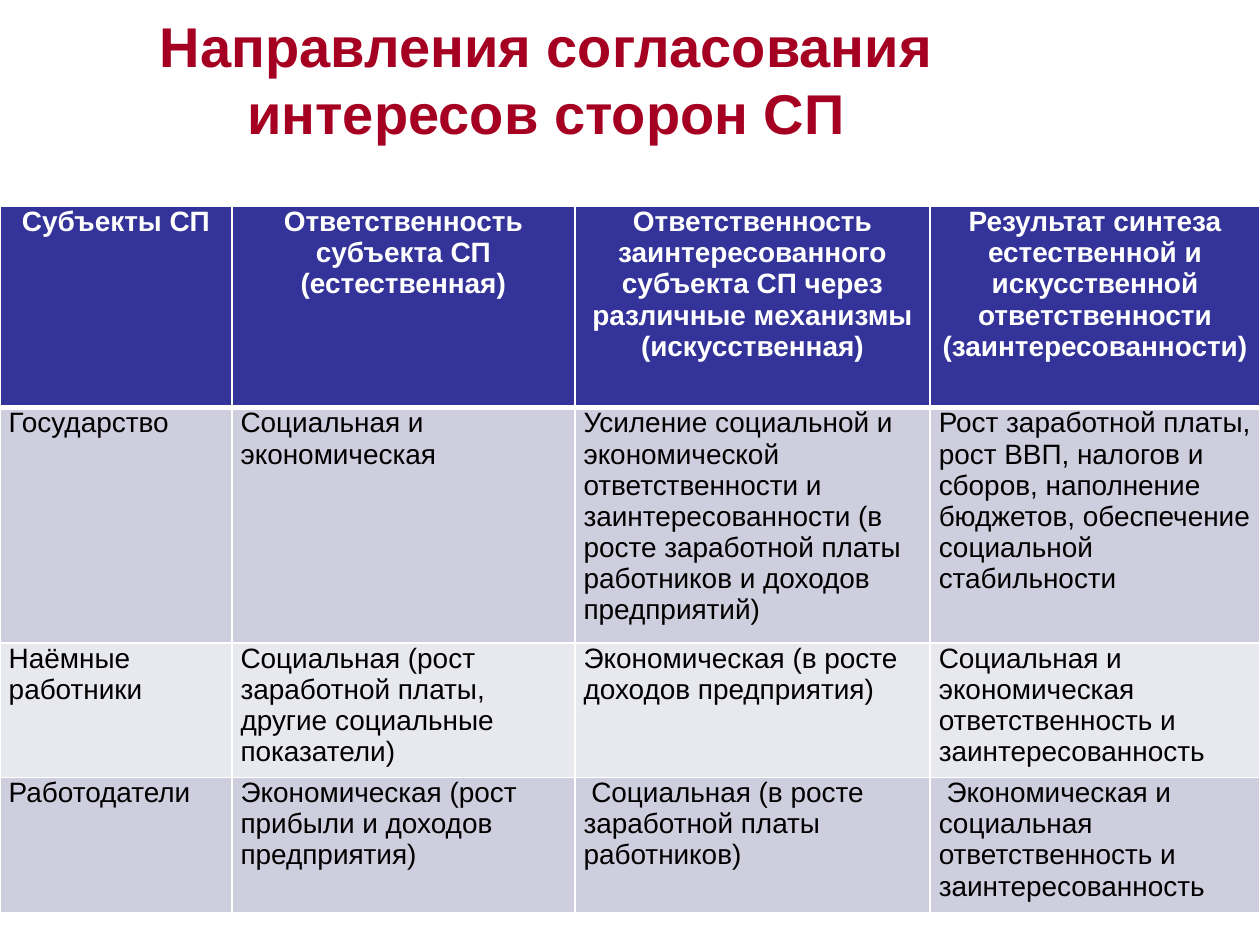
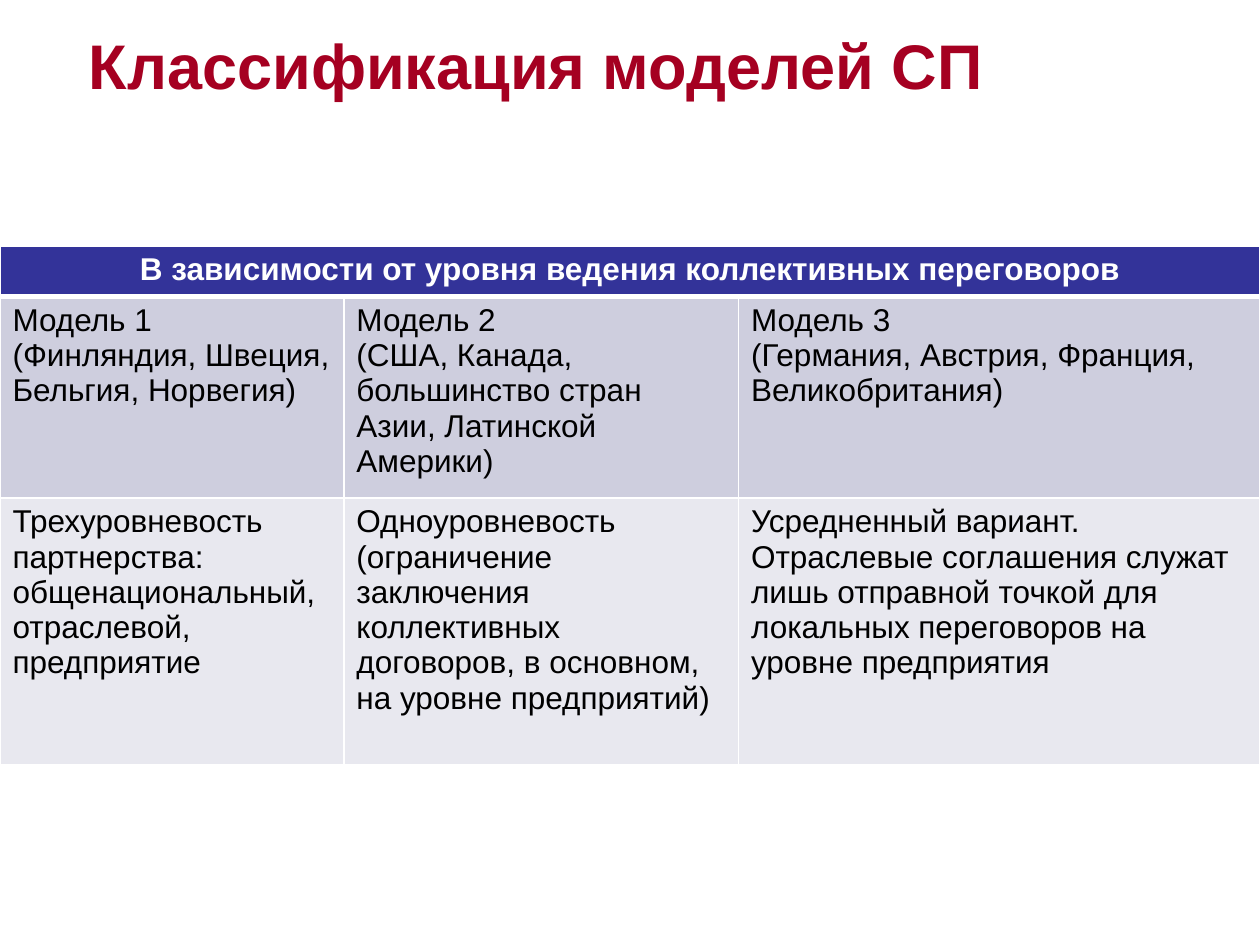
import pptx
import pptx.dml.color
import pptx.enum.text
import pptx.oxml
import pptx.oxml.ns
import pptx.util

Pt = pptx.util.Pt
RGBColor = pptx.dml.color.RGBColor
PP_ALIGN = pptx.enum.text.PP_ALIGN
MSO_ANCHOR = pptx.enum.text.MSO_ANCHOR

# Shared look
FONT = "Arial"
TITLE_RED = RGBColor(0xA5, 0x00, 0x21)
HEADER_BLUE = RGBColor(0x33, 0x33, 0x99)
BAND_DARK = RGBColor(0xCE, 0xCE, 0xDE)
BAND_LIGHT = RGBColor(0xE8, 0xE8, 0xEF)
WHITE = RGBColor(0xFF, 0xFF, 0xFF)
BLACK = RGBColor(0x00, 0x00, 0x00)
SLIDE_WIDTH, SLIDE_HEIGHT = Pt(720), Pt(540)
TITLE_WIDTH = 556.5
GRID_LINE, HEADER_LINE = Pt(1), Pt(3)


def write_paragraph(paragraph, text, size, color, bold, centred):
    paragraph.alignment = PP_ALIGN.CENTER if centred else PP_ALIGN.LEFT
    run = paragraph.add_run()
    run.text = text
    run.font.name = FONT
    run.font.size = Pt(size)
    run.font.bold = bold
    run.font.color.rgb = color


def set_borders(cell, row_index):
    widths = {
        "L": GRID_LINE,
        "R": GRID_LINE,
        "T": HEADER_LINE if row_index == 1 else GRID_LINE,
        "B": HEADER_LINE if row_index == 0 else GRID_LINE,
    }
    properties = cell._tc.get_or_add_tcPr()
    for side, width in widths.items():
        properties.append(pptx.oxml.parse_xml(
            f'<a:ln{side} {pptx.oxml.ns.nsdecls("a")} w="{int(width)}">'
            f'<a:solidFill><a:srgbClr val="{WHITE}"/></a:solidFill>'
            f'</a:ln{side}>'))


# Slide content: title boxes are left, top, height; cells are lists of paragraphs
slides = [
    {
        "title": "Направления согласования интересов сторон СП",
        "title_size": 32,
        "title_box": (34, 0, 90),
        "table_top": 118,
        "text_size": 16,
        "margins": (5, 0),
        "columns": [132.5, 196, 203, 188.5],
        "row_heights": [115, 134, 77, 77],
        "rows": [
            [["Субъекты СП"],
             ["Ответственность субъекта СП (естественная)"],
             ["Ответственность заинтересованного субъекта СП через "
              "различные механизмы (искусственная)"],
             ["Результат синтеза естественной и искусственной "
              "ответственности (заинтересованности)"]],
            [["Государство"],
             ["Социальная и экономическая"],
             ["Усиление социальной и экономической ответственности и "
              "заинтересованности (в росте заработной платы работников "
              "и доходов предприятий)"],
             ["Рост заработной платы, рост ВВП, налогов и сборов, "
              "наполнение бюджетов, обеспечение социальной стабильности"]],
            [["Наёмные работники"],
             ["Социальная (рост заработной платы, другие социальные "
              "показатели)"],
             ["Экономическая (в росте доходов предприятия)"],
             ["Социальная и экономическая ответственность и "
              "заинтересованность"]],
            [["Работодатели"],
             ["Экономическая (рост прибыли и доходов предприятия)"],
             [" Социальная (в росте заработной платы работников)"],
             [" Экономическая и социальная ответственность и "
              "заинтересованность"]],
        ],
    },
    {
        "title": "Классификация моделей СП",
        "title_size": 36,
        "title_box": (28, 16.5, 40.5),
        "table_top": 140.5,
        "text_size": 18,
        "margins": (7.2, 3.6),
        "columns": [196.5, 225.5, 298],
        "row_heights": [27, 108, 152.5],
        "rows": [
            [["В зависимости от уровня ведения коллективных переговоров"]],
            [["Модель 1", "(Финляндия, Швеция, Бельгия, Норвегия)"],
             ["Модель 2",
              "(США, Канада, большинство стран Азии, Латинской Америки)"],
             ["Модель 3", "(Германия, Австрия, Франция, Великобритания)"]],
            [["Трехуровневость партнерства: общенациональный, "
              "отраслевой, предприятие"],
             ["Одноуровневость (ограничение заключения коллективных "
              "договоров, в основном, на уровне предприятий)"],
             ["Усредненный вариант. Отраслевые соглашения служат лишь "
              "отправной точкой для локальных переговоров на уровне "
              "предприятия"]],
        ],
    },
]

presentation = pptx.Presentation()
presentation.slide_width = SLIDE_WIDTH
presentation.slide_height = SLIDE_HEIGHT
blank_layout = presentation.slide_layouts[6]

for content in slides:
    slide = presentation.slides.add_slide(blank_layout)

    # Title
    left, top, height = content["title_box"]
    title = slide.shapes.add_textbox(Pt(left), Pt(top), Pt(TITLE_WIDTH), Pt(height))
    title.text_frame.word_wrap = True
    title.text_frame.vertical_anchor = MSO_ANCHOR.MIDDLE
    write_paragraph(title.text_frame.paragraphs[0], content["title"],
                    content["title_size"], TITLE_RED, True, True)

    # Table grid
    rows, columns = content["rows"], content["columns"]
    row_heights = content["row_heights"]
    table = slide.shapes.add_table(
        len(rows), len(columns), Pt(0), Pt(content["table_top"]),
        SLIDE_WIDTH, Pt(sum(row_heights))).table
    table.horz_banding = False
    for column, width in zip(table.columns, columns):
        column.width = Pt(width)
    for row, height in zip(table.rows, row_heights):
        row.height = Pt(height)

    # Cell borders, fills and text
    side_margin, end_margin = content["margins"]
    for row_index, row in enumerate(rows):
        is_header = row_index == 0
        band = BAND_DARK if row_index % 2 else BAND_LIGHT
        for column_index in range(len(columns)):
            cell = table.cell(row_index, column_index)
            set_borders(cell, row_index)
            cell.fill.solid()
            cell.fill.fore_color.rgb = HEADER_BLUE if is_header else band
            cell.margin_left = cell.margin_right = Pt(side_margin)
            cell.margin_top = cell.margin_bottom = Pt(end_margin)
        for column_index, texts in enumerate(row):
            text_frame = table.cell(row_index, column_index).text_frame
            for text_index, text in enumerate(texts):
                paragraph = (text_frame.add_paragraph() if text_index
                             else text_frame.paragraphs[0])
                write_paragraph(paragraph, text, content["text_size"],
                                WHITE if is_header else BLACK,
                                is_header, is_header)
        # A row with a single text spans the whole table
        if len(row) == 1:
            table.cell(row_index, 0).merge(table.cell(row_index, len(columns) - 1))

presentation.save("out.pptx")
